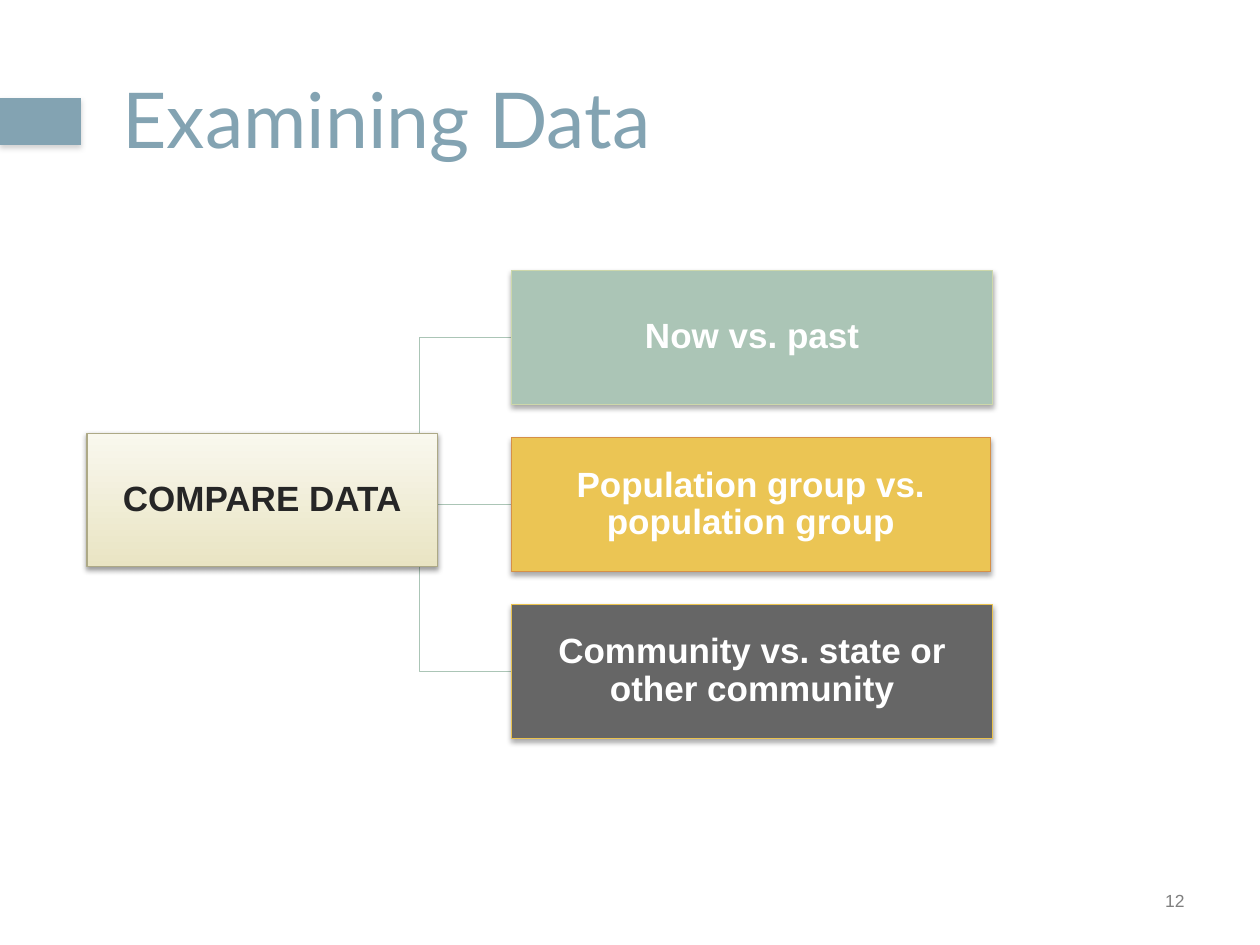
from lxml import etree
from pptx import Presentation
from pptx import util as u
from pptx.dml.color import RGBColor
from pptx.enum import shapes, text
from pptx.oxml.ns import qn

# Content
TITLE = "Examining Data"
PAGE_NUMBER = "12"
HUB = "COMPARE DATA"
OPTIONS = [  # label, fill, line, width
    ("Now vs. past", "ABC5B6", "CDD7AA", 275),
    ("Population group vs. population group", "EBC554", "D69047", 273.6),
    ("Community vs. state or other community", "666666", "EAC24E", 275),
]

# Layout in points
HUB_LEFT, HUB_TOP, HUB_WIDTH = 49.7, 247.6, 200.2
OPTION_LEFT, OPTION_TOP, OPTION_STEP = 292.3, 154.8, 95.4
BOX_HEIGHT = 76.3
BRANCH_COLOR = "ABC5B6"

# Text formats
TITLE_FONT = dict(name="Lato", size=44, color="83A3B2", bold=False)
NUMBER_FONT = dict(name="Arial", size=10, color="7F7F7F", bold=False)
HUB_FONT = dict(name="Arial", size=20, color="262626", bold=True)
OPTION_FONT = dict(HUB_FONT, color="FFFFFF")


def rgb(value):
    return RGBColor.from_string(value)


def set_line(shape, color):
    shape.line.color.rgb = rgb(color)
    shape.line.width = u.Pt(0.75)


def add_shadow(shape, color, opacity, distance):
    shape.shadow.inherit = False
    effects = shape._element.spPr.find(qn("a:effectLst"))
    shadow = etree.SubElement(
        effects, qn("a:outerShdw"), blurRad=str(u.Pt(3.1)),
        dist=str(u.Pt(distance)), dir="5400000", rotWithShape="0")
    tint = etree.SubElement(shadow, qn("a:srgbClr"), val=color)
    etree.SubElement(tint, qn("a:alpha"), val=str(opacity * 1000))


def write(shape, words, font, align, inset, spacing=1.0):
    frame = shape.text_frame
    frame_format = dict(
        word_wrap=True, vertical_anchor=text.MSO_ANCHOR.MIDDLE,
        margin_left=u.Pt(inset), margin_right=u.Pt(inset),
        margin_top=u.Pt(inset), margin_bottom=u.Pt(inset))
    for name, value in frame_format.items():
        setattr(frame, name, value)
    paragraph = frame.paragraphs[0]
    paragraph.alignment = align
    paragraph.line_spacing = spacing
    run = paragraph.add_run()
    run.text = words
    for name, value in dict(name=font["name"], size=u.Pt(font["size"]),
                            bold=font["bold"]).items():
        setattr(run.font, name, value)
    run.font.color.rgb = rgb(font["color"])


def add_rectangle(slide, left, top, width, height):
    return slide.shapes.add_shape(
        shapes.MSO_SHAPE.RECTANGLE, *map(u.Pt, (left, top, width, height)))


def add_label(slide, box, words, font, align, inset):
    write(slide.shapes.add_textbox(*map(u.Pt, box)), words, font, align, inset)


def add_branch(slide, start, end):
    middle = (start[0] + end[0]) / 2
    points = [start, (middle, start[1]), (middle, end[1]), end]
    points = [(u.Pt(x), u.Pt(y)) for x, y in points]
    builder = slide.shapes.build_freeform(*points[0])
    builder.add_line_segments(points[1:], close=False)
    branch = builder.convert_to_shape()
    branch.fill.background()
    branch.shadow.inherit = False
    set_line(branch, BRANCH_COLOR)


def add_box(slide, left, top, width, words, font, line):
    box = add_rectangle(slide, left, top, width, BOX_HEIGHT)
    set_line(box, line)
    write(box, words, font, text.PP_ALIGN.CENTER, 0.72, 0.9)
    return box


def main():
    presentation = Presentation()
    presentation.slide_width, presentation.slide_height = u.Pt(720), u.Pt(540)
    slide = presentation.slides.add_slide(presentation.slide_layouts[6])

    # Accent bar, title and page number
    bar = add_rectangle(slide, 0, 56, 46.3, 26.8)
    bar.fill.solid()
    bar.fill.fore_color.rgb = rgb("83A3B2")
    bar.line.fill.background()
    add_shadow(bar, "808080", 35, 1.8)
    add_label(slide, (70, 22.3, 640, 90), TITLE, TITLE_FONT,
              text.PP_ALIGN.LEFT, 0)
    add_label(slide, (516.2, 500.4, 167.8, 28.8), PAGE_NUMBER, NUMBER_FONT,
              text.PP_ALIGN.RIGHT, 7.2)

    # Branches run behind the boxes
    tops = [OPTION_TOP + i * OPTION_STEP for i in range(len(OPTIONS))]
    hub_center = (187.2, HUB_TOP + BOX_HEIGHT / 2)
    for top in reversed(tops):
        add_branch(slide, hub_center, (OPTION_LEFT, top + BOX_HEIGHT / 2))

    # Hub
    hub = add_box(slide, HUB_LEFT, HUB_TOP, HUB_WIDTH, HUB, HUB_FONT, "ADA986")
    hub.fill.gradient()
    hub.fill.gradient_angle = 90
    for stop, color in zip(hub.fill.gradient_stops, ("E9E4C3", "F9F8EE")):
        stop.color.rgb = rgb(color)
    for stop, position in zip(hub.fill.gradient_stops, (0, 1)):
        stop.position = position
    add_shadow(hub, "000000", 38, 1.6)

    # Options
    for top, (words, fill, line, width) in zip(tops, OPTIONS):
        option = add_box(slide, OPTION_LEFT, top, width, words, OPTION_FONT, line)
        option.fill.solid()
        option.fill.fore_color.rgb = rgb(fill)
        add_shadow(option, "000000", 35, 1.8)

    presentation.save("out.pptx")


if __name__ == "__main__":
    main()
